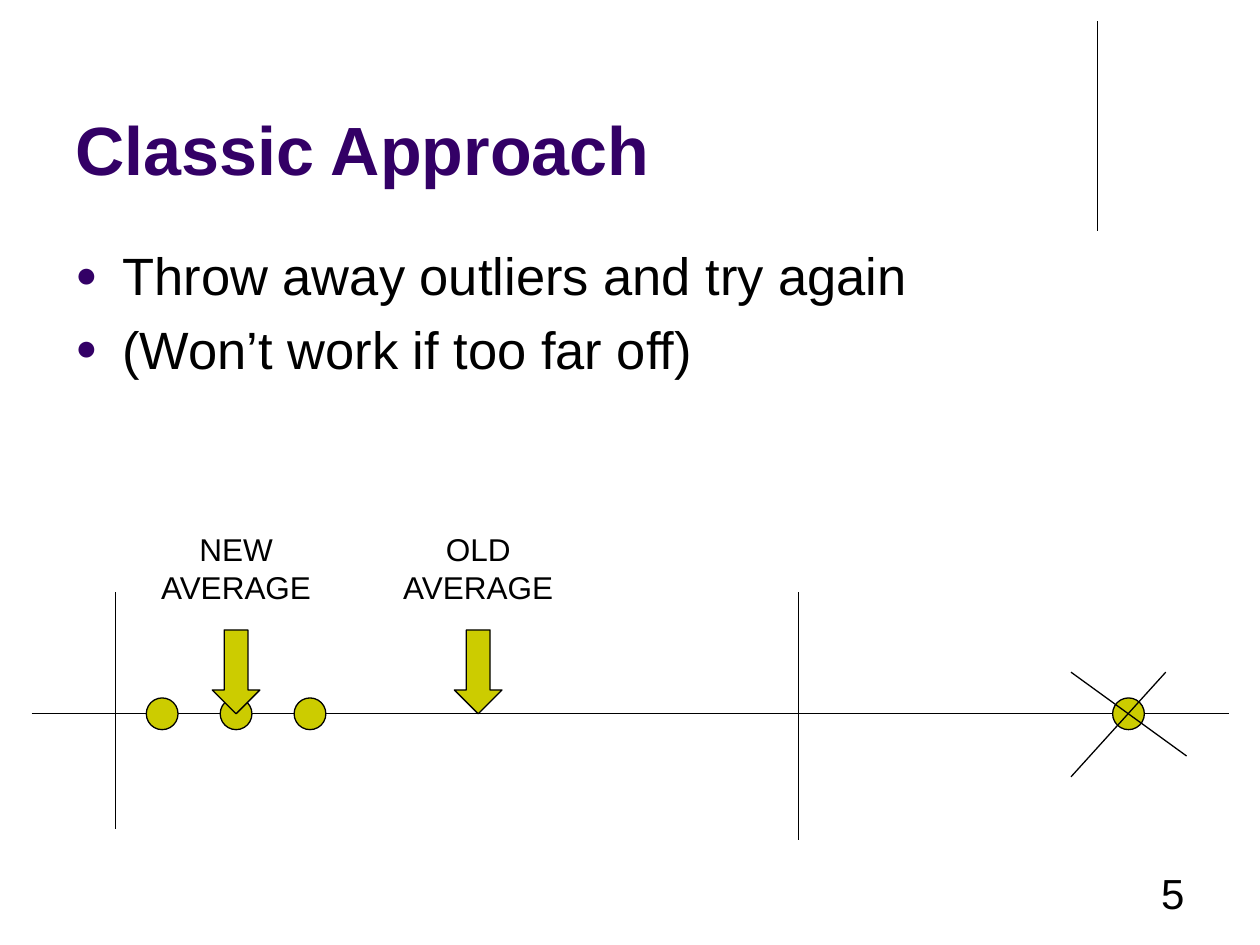
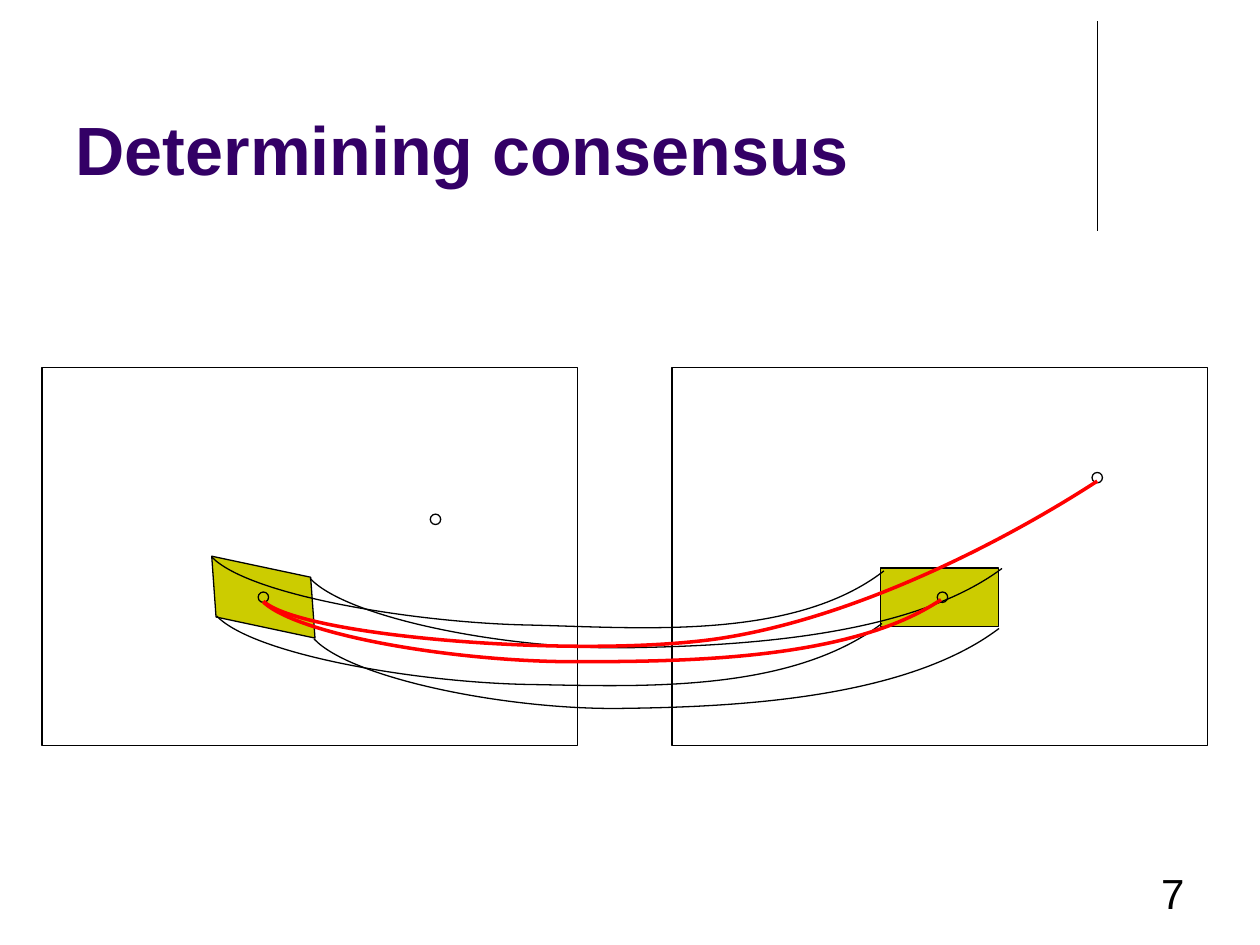
from lxml.etree import SubElement
from pptx import Presentation
from pptx.dml.color import RGBColor
from pptx.enum.shapes import MSO_CONNECTOR, MSO_SHAPE
from pptx.enum.text import MSO_ANCHOR, PP_ALIGN
from pptx.oxml.ns import qn
from pptx.util import Cm, Pt

# Shared look
COLORS = {"title": "330066", "ink": "000000", "marker": "CCCC00", "match": "FF0000"}
FONT = "Arial"
TITLE_BOX = (1.27, 0.33, 20.96, 3.61)
NUMBER_BOX = (18.21, 17.36, 5.92, 1.27)
CORNER_RULE = (22.12, 0.43, 22.12, 4.65)

# Classic approach: lengths in cm
APPROACH_BULLETS = ["Throw away outliers and try again", "(Won’t work if too far off)"]
BULLET_BOX = (1.27, 4.78, 22.86, 12.24)
AXIS_Y = 14.39
AXIS = (0.64, AXIS_Y, 24.77, AXIS_Y)
SAMPLE_SIZE = 0.64
INLIERS = [3.27 + 1.49 * step for step in range(3)]
OUTLIER = 22.75
AVERAGES = [("OLD AVERAGE", 9.64), ("NEW AVERAGE", 4.76)]
BOUNDS_AND_CROSS = [
    (2.33, 11.94, 2.33, 16.71),
    (16.09, 11.94, 16.09, 16.94),
    (21.59, 13.55, 23.92, 15.24),
    (21.59, 15.66, 23.5, 13.55),
]

# Determining consensus: lengths in cm
FRAME_LEFTS = [0.85, 13.55]
PATCHES = [(4.12, 12, 0.288), (17.75, 0, 0)]  # left, rotation, slant
FEATURES = [(8.78, 10.47), (5.31, 12.04), (19, 12.04), (22.12, 9.63)]
FEATURE_SIZE = 0.21
# Each curve: start, two controls, middle, two controls, end
CORNER_CURVES = [
    [(6.33, 12.88), (7.09, 13.69), (10.31, 14.33), (12.62, 14.28),
     (14.91, 14.25), (18.29, 14.07), (20.14, 12.67)],
    [(4.37, 12.42), (5.13, 13.21), (8.48, 13.77), (10.72, 13.8),
     (12.95, 13.84), (15.93, 13.97), (17.78, 12.57)],
    [(6.25, 11.66), (7.01, 12.47), (10.21, 13.08), (12.53, 13.06),
     (14.86, 13.03), (18.34, 12.85), (20.2, 11.46)],
    [(4.27, 11.23), (5.03, 12.01), (8.36, 12.55), (10.62, 12.6),
     (12.88, 12.65), (15.98, 12.93), (17.82, 11.51)],
]
MATCH_CURVES = [
    [(5.31, 12.12), (6.07, 12.83), (11.63, 13.28), (14.45, 12.88),
     (17.25, 12.47), (20.27, 10.9), (22.12, 9.7)],
    [(5.31, 12.14), (6.07, 12.83), (9.27, 13.34), (11.56, 13.34),
     (13.82, 13.34), (17.15, 13.31), (18.97, 12.09)],
]


def lengths(values):
    return [Cm(value) for value in values]


def rgb(name):
    return RGBColor.from_string(COLORS[name])


def style_text(para, size, color="ink", bold=False):
    for span in para.runs:
        span.font.name = FONT
        span.font.size = Pt(size)
        span.font.bold = bold
        span.font.color.rgb = rgb(color)


def style_shape(shape, fill=None, line="ink", width=0.75):
    shape.shadow.inherit = False
    if fill:
        shape.fill.solid()
        shape.fill.fore_color.rgb = rgb(fill)
    else:
        shape.fill.background()
    shape.line.color.rgb = rgb(line)
    shape.line.width = Pt(width)


def add_line(page, ends):
    line = page.shapes.add_connector(MSO_CONNECTOR.STRAIGHT, *lengths(ends))
    line.line.color.rgb = rgb("ink")
    line.line.width = Pt(0.75)
    SubElement(line._element.spPr, qn("a:effectLst"))
    return line


def add_figure(page, kind, box, fill=None):
    shape = page.shapes.add_shape(kind, *lengths(box))
    style_shape(shape, fill)
    return shape


def add_dot(page, x, y, size, fill=None):
    add_figure(page, MSO_SHAPE.OVAL, (x - size / 2, y - size / 2, size, size), fill)


def add_text(page, box, paragraphs, size, align=PP_ALIGN.LEFT):
    frame = page.shapes.add_textbox(*lengths(box)).text_frame
    frame.word_wrap = True
    frame.text = "\n".join(paragraphs)
    for para in frame.paragraphs:
        para.alignment = align
        style_text(para, size)
    return frame


def add_bullets(page, box, items):
    frame = add_text(page, box, items, 30)
    for index, para in enumerate(frame.paragraphs):
        if index:
            para.space_before = Pt(6)
        properties = para._p.get_or_add_pPr()
        properties.set("marL", str(Cm(0.95)))
        properties.set("indent", str(-Cm(0.95)))
        color = SubElement(properties, qn("a:buClr"))
        SubElement(color, qn("a:srgbClr"), val=COLORS["title"])
        SubElement(properties, qn("a:buSzPct"), val="70000")
        SubElement(properties, qn("a:buFont"), typeface=FONT)
        SubElement(properties, qn("a:buChar"), char="●")


def add_curve(page, knots, line="ink", width=0.75):
    start, middle, end = (lengths(knot) for knot in knots[::3])
    builder = page.shapes.build_freeform(*start)
    builder.add_line_segments([middle, end], close=False)
    shape = builder.convert_to_shape()
    # Bend each straight segment with its two control points
    segments = list(shape._element.iter(qn("a:lnTo")))
    for segment, controls in zip(segments, (knots[1:3], knots[4:6])):
        segment.tag = qn("a:cubicBezTo")
        for index, (x, y) in enumerate(controls):
            point = SubElement(segment, qn("a:pt"))
            point.set("x", str(Cm(x) - shape.left))
            point.set("y", str(Cm(y) - shape.top))
            segment.insert(index, point)
    style_shape(shape, None, line, width)


def add_page(deck, title, number):
    page = deck.slides.add_slide(deck.slide_layouts[5])
    heading = page.shapes.title
    heading.left, heading.top, heading.width, heading.height = lengths(TITLE_BOX)
    frame = heading.text_frame
    frame.text = title
    frame.vertical_anchor = MSO_ANCHOR.BOTTOM
    frame.paragraphs[0].alignment = PP_ALIGN.LEFT
    style_text(frame.paragraphs[0], 39, "title", bold=True)
    add_text(page, NUMBER_BOX, [number], 24, PP_ALIGN.RIGHT)
    return page


def build_approach(deck):
    page = add_page(deck, "Classic Approach", "5")
    # The corner rule belongs to the master, so every page shows it
    rule = add_line(page, CORNER_RULE)
    deck.slide_master.shapes._spTree.append(rule._element)
    add_bullets(page, BULLET_BOX, APPROACH_BULLETS)
    # Number line with its samples
    add_line(page, AXIS)
    for x in [*INLIERS, OUTLIER]:
        add_dot(page, x, AXIS_Y, SAMPLE_SIZE, "marker")
    for ends in BOUNDS_AND_CROSS:
        add_line(page, ends)
    # Arrows that point at the averages
    for label, x in AVERAGES:
        box = (x - 0.48, AXIS_Y - 1.69, 0.96, 1.69)
        add_figure(page, MSO_SHAPE.DOWN_ARROW, box, "marker")
        add_text(page, (x - 2.27, 10.57, 4.54, 1.8), [label], 18, PP_ALIGN.CENTER)


def build_consensus(deck):
    page = add_page(deck, "Determining consensus", "7")
    for left in FRAME_LEFTS:
        add_figure(page, MSO_SHAPE.RECTANGLE, (left, 7.41, 10.8, 7.62))
    # Matching patches
    for left, rotation, slant in PATCHES:
        box = (left, 11.45, 2.38, 1.18)
        patch = add_figure(page, MSO_SHAPE.PARALLELOGRAM, box, "marker")
        patch.adjustments[0] = slant
        patch.rotation = rotation
        patch._element.spPr.find(qn("a:xfrm")).set("flipV", "1")
    # Corner links, features and matches
    for knots in CORNER_CURVES:
        add_curve(page, knots)
    for x, y in FEATURES:
        add_dot(page, x, y, FEATURE_SIZE)
    for knots in MATCH_CURVES:
        add_curve(page, knots, "match", 2)


def main():
    deck = Presentation()
    deck.slide_width, deck.slide_height = Cm(25.4), Cm(19.05)
    build_approach(deck)
    build_consensus(deck)
    deck.save("out.pptx")


if __name__ == "__main__":
    main()
